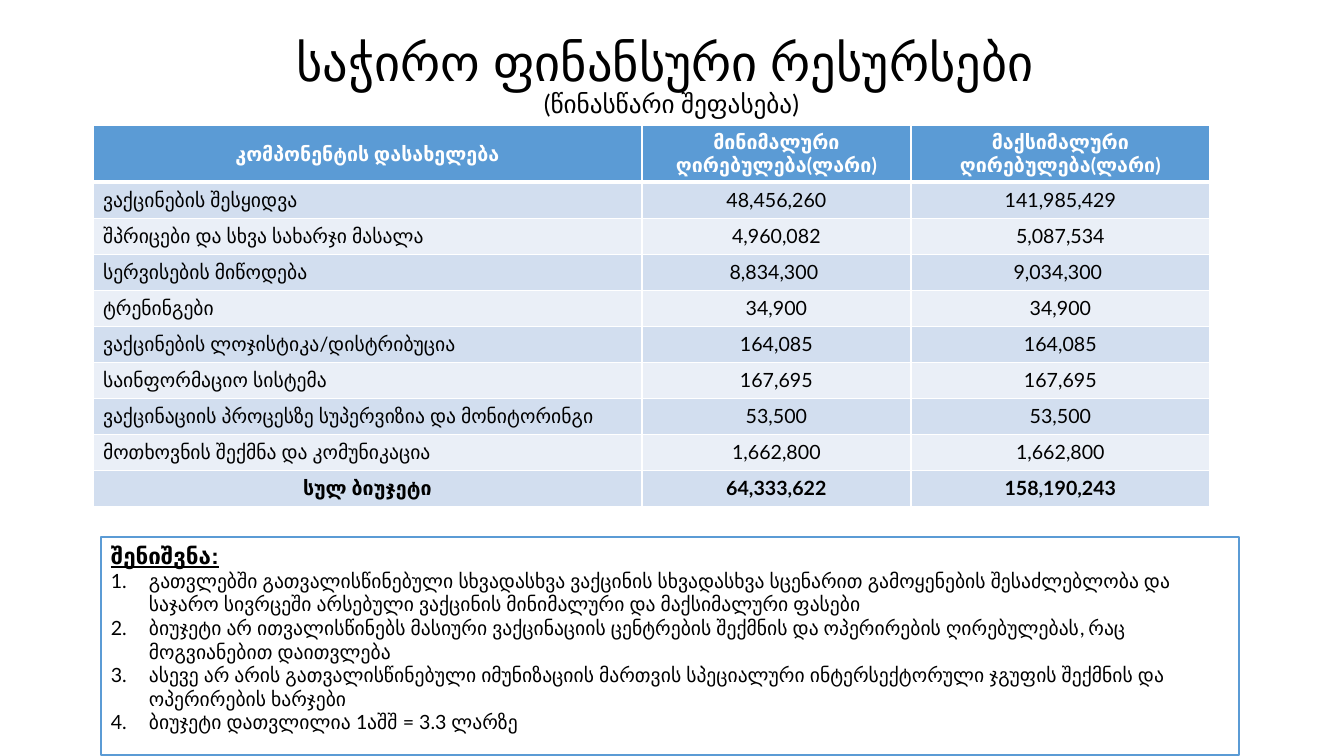
from lxml import etree
from pptx import Presentation
from pptx import util as u
from pptx.dml.color import RGBColor
from pptx.enum import shapes, text
from pptx.oxml.ns import qn

SCALE = u.Inches(1) / 100.8
BLACK = RGBColor(0x00, 0x00, 0x00)
WHITE = RGBColor(0xFF, 0xFF, 0xFF)
BLUE = RGBColor(0x5B, 0x9B, 0xD5)
BAND_DARK = RGBColor(0xD2, 0xDE, 0xEF)
BAND_LIGHT = RGBColor(0xEA, 0xEF, 0xF7)

TITLE = "საჭირო ფინანსური რესურსები "
SUBTITLE = "(წინასწარი შეფასება)"
BUDGET = [
    ("კომპონენტის დასახელება", "მინიმალური ღირებულება(ლარი)", "მაქსიმალური ღირებულება(ლარი)"),
    ("ვაქცინების შესყიდვა", "48,456,260", "141,985,429"),
    ("შპრიცები და სხვა სახარჯი მასალა", "4,960,082", "5,087,534"),
    ("სერვისების მიწოდება", "8,834,300 ", "9,034,300 "),
    ("ტრენინგები", "34,900", "34,900"),
    ("ვაქცინების ლოჯისტიკა/დისტრიბუცია", "164,085", "164,085"),
    ("საინფორმაციო სისტემა", "167,695", "167,695"),
    ("ვაქცინაციის პროცესზე სუპერვიზია და მონიტორინგი", "53,500", "53,500"),
    ("მოთხოვნის შექმნა და კომუნიკაცია", "1,662,800", "1,662,800"),
    ("სულ ბიუჯეტი", "64,333,622", "158,190,243"),
]
COLUMN_WIDTHS = (549, 269, 299)
HEADER_HEIGHT, ROW_HEIGHT = 56, 36
NOTE_HEADING = "შენიშვნა:"
NOTES = [
    "გათვლებში გათვალისწინებული სხვადასხვა ვაქცინის სხვადასხვა სცენარით გამოყენების "
    "შესაძლებლობა და საჯარო სივრცეში არსებული ვაქცინის მინიმალური და მაქსიმალური ფასები",
    "ბიუჯეტი არ ითვალისწინებს მასიური ვაქცინაციის ცენტრების შექმნის და ოპერირების "
    "ღირებულებას, რაც მოგვიანებით დაითვლება",
    "ასევე არ არის გათვალისწინებული იმუნიზაციის მართვის სპეციალური ინტერსექტორული "
    "ჯგუფის შექმნის და ოპერირების ხარჯები",
    "ბიუჯეტი დათვლილია 1აშშ = 3.3 ლარზე",
]


def px(length):
    return u.Emu(round(length * SCALE))


def format_run(run, size, color=BLACK, bold=False, name="Lato"):
    run.font.size = u.Pt(size)
    run.font.name = name
    run.font.bold = bold
    run.font.color.rgb = color


def add_title(slide, left, top, width, height):
    box = slide.shapes.add_textbox(px(left), px(top), px(width), px(height))
    frame = box.text_frame
    frame.word_wrap = True
    frame.vertical_anchor = text.MSO_ANCHOR.MIDDLE
    paragraph = frame.paragraphs[0]
    paragraph.text = TITLE + "\v" + SUBTITLE
    paragraph.alignment = text.PP_ALIGN.CENTER
    paragraph.line_spacing = 0.9
    for run, size in zip(paragraph.runs, (36, 18)):
        format_run(run, size)


def add_borders(cell, bottom_width):
    properties = cell._tc.get_or_add_tcPr()
    for side, width in (("L", 1), ("R", 1), ("T", 1), ("B", bottom_width)):
        line = etree.SubElement(properties, qn("a:ln" + side), w=str(u.Pt(width)))
        fill = etree.SubElement(line, qn("a:solidFill"))
        etree.SubElement(fill, qn("a:srgbClr"), val=str(WHITE))


def add_budget_table(slide, left, top):
    last = len(BUDGET) - 1
    height = HEADER_HEIGHT + last * ROW_HEIGHT
    frame = slide.shapes.add_table(len(BUDGET), len(COLUMN_WIDTHS), px(left), px(top),
                                   px(sum(COLUMN_WIDTHS)), px(height))
    table = frame.table
    for column, width in zip(table.columns, COLUMN_WIDTHS):
        column.width = px(width)
    for i, values in enumerate(BUDGET):
        header = i == 0
        table.rows[i].height = px(HEADER_HEIGHT if header else ROW_HEIGHT)
        fill = BLUE if header else BAND_DARK if i % 2 else BAND_LIGHT
        for j, value in enumerate(values):
            cell = table.cell(i, j)
            cell.text_frame.text = value
            cell.vertical_anchor = text.MSO_ANCHOR.MIDDLE
            paragraph = cell.text_frame.paragraphs[0]
            centered = j > 0 or i in (0, last)
            paragraph.alignment = text.PP_ALIGN.CENTER if centered else text.PP_ALIGN.LEFT
            format_run(paragraph.runs[0], 14, WHITE if header else BLACK, i in (0, last))
            add_borders(cell, 3 if header else 1)
            cell.fill.solid()
            cell.fill.fore_color.rgb = fill


def number_paragraph(paragraph, indent):
    properties = paragraph._p.get_or_add_pPr()
    properties.set("marL", str(px(indent)))
    properties.set("indent", str(-px(indent)))
    etree.SubElement(properties, qn("a:buFont"), typeface="+mj-lt")
    etree.SubElement(properties, qn("a:buAutoNum"), type="arabicPeriod")


def add_notes_box(slide, left, top, width, height):
    box = slide.shapes.add_shape(shapes.MSO_SHAPE.RECTANGLE,
                                 px(left), px(top), px(width), px(height))
    box.shadow.inherit = False
    box.fill.solid()
    box.fill.fore_color.rgb = WHITE
    box.line.color.rgb = BLUE
    box.line.width = u.Pt(1)
    frame = box.text_frame
    frame.word_wrap = True
    frame.vertical_anchor = text.MSO_ANCHOR.TOP
    frame.text = "\n".join([NOTE_HEADING, *NOTES])
    heading, *notes = frame.paragraphs
    heading.alignment = text.PP_ALIGN.LEFT
    format_run(heading.runs[0], 16, bold=True, name="Arial")
    heading.runs[0].font.underline = True
    for note in notes:
        note.alignment = text.PP_ALIGN.LEFT
        number_paragraph(note, 38)
        format_run(note.runs[0], 14)


def main():
    presentation = Presentation()
    presentation.slide_width, presentation.slide_height = px(1344), px(756)
    slide = presentation.slides.add_slide(presentation.slide_layouts[6])
    add_title(slide, 92, 40, 1159, 77)
    add_budget_table(slide, 93, 125)
    add_notes_box(slide, 101, 537, 1138, 218)
    presentation.save("out.pptx")


if __name__ == "__main__":
    main()
